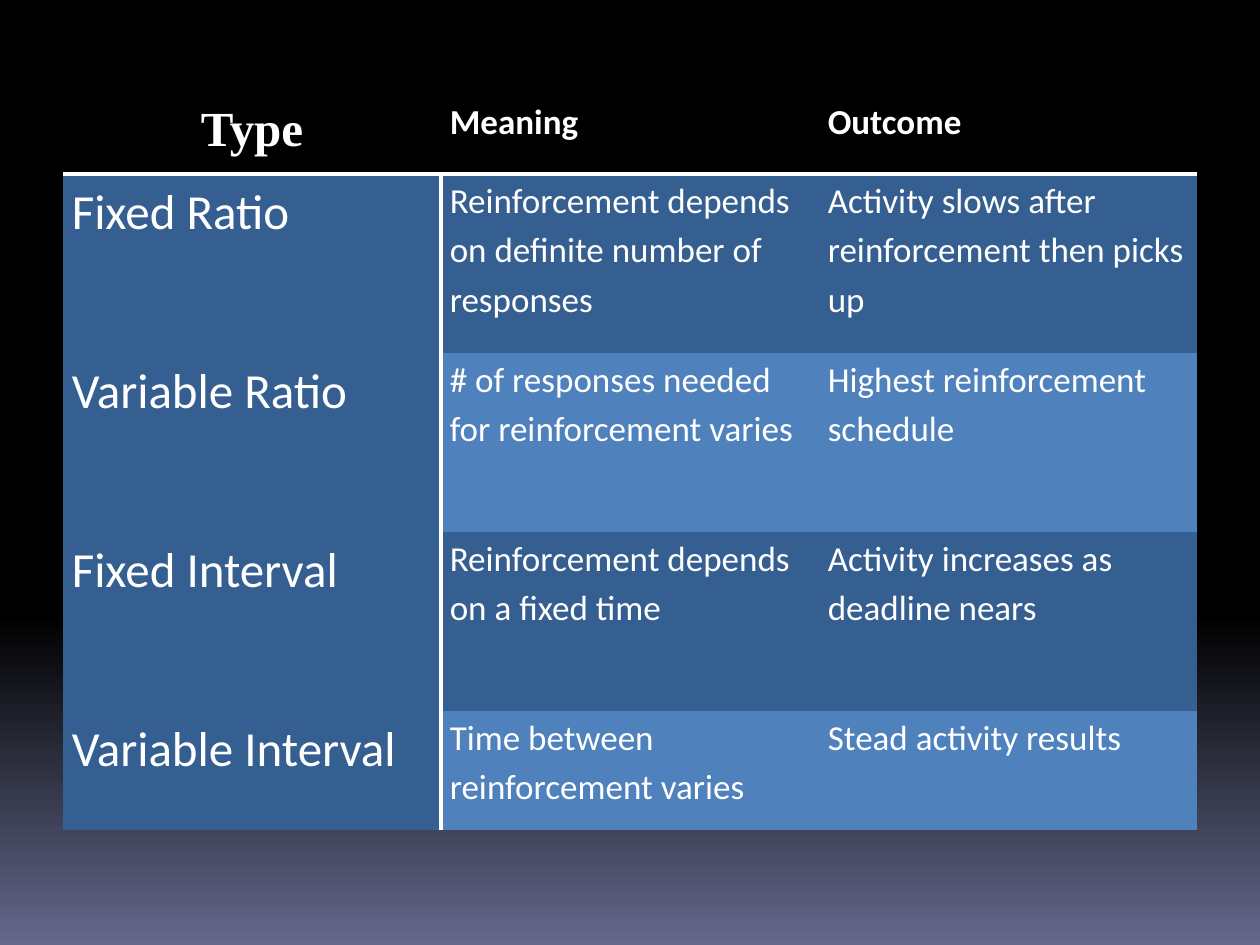
from copy import deepcopy

from lxml import etree
from pptx import Presentation
from pptx import util as u
from pptx.dml.color import RGBColor
from pptx.enum import text
from pptx.oxml import ns

BLACK = RGBColor(0x00, 0x00, 0x00)
WHITE = RGBColor(0xFF, 0xFF, 0xFF)
DARK_BLUE = RGBColor(0x36, 0x5F, 0x91)
LIGHT_BLUE = RGBColor(0x4F, 0x81, 0xBD)
DUSK = RGBColor(0x64, 0x68, 0x8B)

PLAIN_TABLE_STYLE = "{2D5ABB26-0587-4C30-8999-92F81FD0307C}"
COLUMN_WIDTH = 3
ROW_HEIGHTS = [0.63, 1.42, 1.42, 1.42, 0.95]
SCHEDULES = [
    ["Type", "Meaning", "Outcome"],
    ["Fixed Ratio", "Reinforcement depends on definite number of responses",
     "Activity slows after reinforcement then picks up"],
    ["Variable Ratio", "# of responses needed for reinforcement varies",
     "Highest reinforcement schedule"],
    ["Fixed Interval", "Reinforcement depends on a fixed time",
     "Activity increases as deadline nears"],
    ["Variable Interval", "Time between reinforcement varies",
     "Stead activity results"],
]


def paint_background(slide):
    """Fill the slide with black that fades to dusk over the lowest third."""
    fill = slide.background.fill
    fill.gradient()
    fill.gradient_angle = 270
    stop_list = fill._fill._gradFill.find(ns.qn("a:gsLst"))
    stop_list.insert(0, deepcopy(stop_list[0]))
    stops = [(0, BLACK), (0.65, BLACK), (1, DUSK)]
    for stop, (position, color) in zip(fill.gradient_stops, stops):
        stop.position = position
        stop.color.rgb = color


def set_borders(cell, row, column):
    """Rule off the header row and the first column, leaving other edges bare."""
    ruled = {"L": row > 0 and column == 1, "R": row > 0 and column == 0,
             "T": row == 1, "B": row == 0}
    properties = cell._tc.get_or_add_tcPr()
    for index, (side, visible) in enumerate(ruled.items()):
        line = etree.Element(ns.qn(f"a:ln{side}"))
        if visible:
            line.set("w", str(u.Pt(2.25)))
            solid = etree.SubElement(line, ns.qn("a:solidFill"))
            etree.SubElement(solid, ns.qn("a:srgbClr"), val=str(WHITE))
        else:
            etree.SubElement(line, ns.qn("a:noFill"))
        properties.insert(index, line)


def cell_color(row, column):
    """Return the fill of a cell: black header, dark first column, banded body."""
    if row == 0:
        return BLACK
    return DARK_BLUE if column == 0 or row % 2 else LIGHT_BLUE


def fill_cell(cell, content, row, column):
    """Write and format one cell of the table."""
    cell.margin_left = cell.margin_right = u.Inches(0.07)
    cell.margin_top = cell.margin_bottom = 0
    cell.fill.solid()
    cell.fill.fore_color.rgb = cell_color(row, column)
    set_borders(cell, row, column)
    cell.text_frame.text = content
    paragraph = cell.text_frame.paragraphs[0]
    paragraph.line_spacing = 1.15
    is_corner = row == 0 and column == 0
    paragraph.alignment = text.PP_ALIGN.CENTER if is_corner else text.PP_ALIGN.LEFT
    font = paragraph.runs[0].font
    font.name = "Times New Roman" if is_corner else "Calibri"
    font.size = u.Pt(28 if column == 0 else 20)
    font.bold = row == 0
    font.color.rgb = WHITE


def add_schedule_table(slide):
    """Add the table of reinforcement schedules."""
    column_count = len(SCHEDULES[0])
    frame = slide.shapes.add_table(
        len(SCHEDULES), column_count, u.Inches(0.5), u.Inches(0.75),
        u.Inches(COLUMN_WIDTH * column_count), u.Inches(sum(ROW_HEIGHTS)))
    table = frame.table
    table._tbl.tblPr.find(ns.qn("a:tableStyleId")).text = PLAIN_TABLE_STYLE
    for row, (height, contents) in enumerate(zip(ROW_HEIGHTS, SCHEDULES)):
        table.rows[row].height = u.Inches(height)
        for column, content in enumerate(contents):
            fill_cell(table.cell(row, column), content, row, column)


def main():
    """Build the slide and save it."""
    presentation = Presentation()
    presentation.slide_width = u.Inches(10)
    presentation.slide_height = u.Inches(7.5)
    slide = presentation.slides.add_slide(presentation.slide_layouts[6])
    paint_background(slide)
    add_schedule_table(slide)
    presentation.save("out.pptx")


if __name__ == "__main__":
    main()
